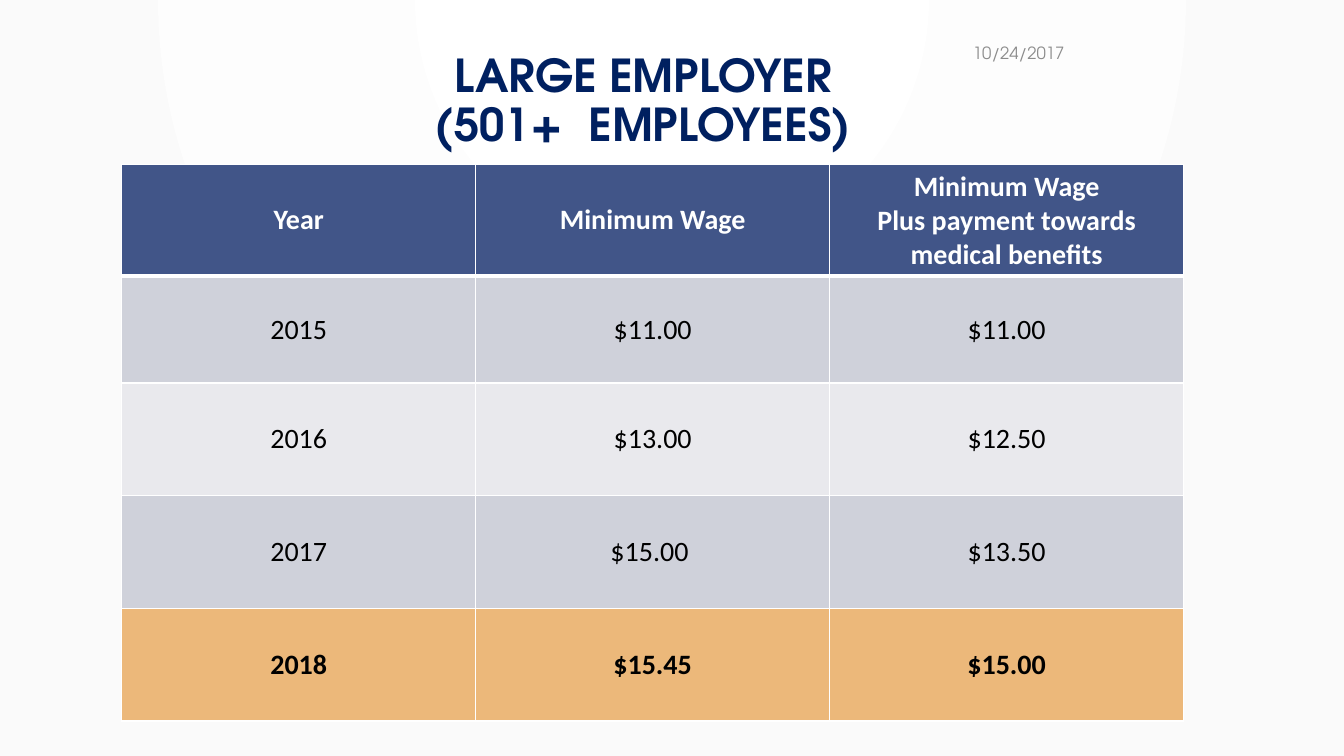
from lxml import etree
from pptx import Presentation
from pptx.dml.color import RGBColor
from pptx.enum.text import MSO_ANCHOR, PP_ALIGN
from pptx.oxml.ns import qn
from pptx.util import Cm, Pt

CENTER, RIGHT = PP_ALIGN.CENTER, PP_ALIGN.RIGHT
TOP, MIDDLE = MSO_ANCHOR.TOP, MSO_ANCHOR.MIDDLE

TITLE = "LARGE EMPLOYER\v(501+  EMPLOYEES)"
DATE = "10/24/2017"
WAGES = [
    ("Year", "Minimum Wage", "Minimum Wage\nPlus payment towards medical benefits"),
    ("2015", "$11.00", "$11.00"),
    ("2016", "$13.00", "$12.50"),
    ("2017", "$15.00 ", "$13.50"),
    ("2018", "$15.45", "$15.00"),
]
# Height in cm, fill, text colour, bold
ROW_STYLES = [
    (2.82, "415588", "FFFFFF", True),
    (2.69, "CFD1DA", "000000", False),
    (2.84, "E9E9ED", "000000", False),
    (2.84, "CFD1DA", "000000", False),
    (2.84, "ECB87A", "000000", True),
]
COLUMN_WIDTH = 8.92
HEADING_FONT, TABLE_FONT = "TeX Gyre Adventor", "Calibri"


def color(value):
    return RGBColor.from_string(value)


def write(frame, text, align, size, font, ink, bold=False):
    frame.text = text
    for para in frame.paragraphs:
        para.alignment = align
        para.font.size = Pt(size)
        para.font.name = font
        para.font.bold = bold
        para.font.color.rgb = color(ink)


def add_text(page, place, anchor, text, *style):
    box = page.shapes.add_textbox(*map(Cm, place))
    box.text_frame.word_wrap = True
    box.text_frame.vertical_anchor = anchor
    write(box.text_frame, text, *style)
    return box


def set_borders(cell, bottom, top):
    """Give a cell white borders; they come before the fill in the XML."""
    properties = cell._tc.get_or_add_tcPr()
    widths = {"a:lnL": 1, "a:lnR": 1, "a:lnT": top, "a:lnB": bottom}
    for position, (tag, width) in enumerate(widths.items()):
        line = etree.Element(qn(tag), w=str(Pt(width)))
        fill = etree.SubElement(line, qn("a:solidFill"))
        etree.SubElement(fill, qn("a:srgbClr"), val="FFFFFF")
        properties.insert(position, line)


def paint_background(page):
    """Fill the page with a radial gradient centred on its top edge."""
    fill = page.background.fill
    fill.gradient()
    for stop, (position, value) in zip(fill.gradient_stops, [(0, "FFFFFF"), (1, "FAFAFA")]):
        stop.position = position
        stop.color.rgb = color(value)
    linear = page.background._cSld.find(".//" + qn("a:lin"))
    radial = etree.Element(qn("a:path"), path="circle")
    etree.SubElement(radial, qn("a:fillToRect"), l="43000", t="0", r="43000", b="100000")
    linear.getparent().replace(linear, radial)


def add_wage_table(page):
    heights = [style[0] for style in ROW_STYLES]
    columns = len(WAGES[0])
    table = page.shapes.add_table(
        len(WAGES), columns, Cm(3.07), Cm(4.14),
        Cm(COLUMN_WIDTH * columns), Cm(sum(heights))).table
    for column in table.columns:
        column.width = Cm(COLUMN_WIDTH)
    for index, (values, style) in enumerate(zip(WAGES, ROW_STYLES)):
        height, fill, ink, bold = style
        table.rows[index].height = Cm(height)
        for cell, value in zip(table.rows[index].cells, values):
            cell.vertical_anchor = MIDDLE
            cell.fill.solid()
            cell.fill.fore_color.rgb = color(fill)
            set_borders(cell, bottom=3 if index == 0 else 1, top=3 if index == 1 else 1)
            write(cell.text_frame, value, CENTER, 20, TABLE_FONT, ink, bold)


def main():
    deck = Presentation()
    deck.slide_width, deck.slide_height = Cm(33.87), Cm(19.05)
    page = deck.slides.add_slide(deck.slide_layouts[6])
    paint_background(page)
    title = add_text(page, (2.87, 1.22, 26.67, 2.31), TOP, TITLE,
                     CENTER, 32.4, HEADING_FONT, "002060", True)
    title.text_frame.paragraphs[0].line_spacing = 0.9
    add_wage_table(page)
    add_text(page, (20.09, 0.91, 6.99, 0.86), MIDDLE, DATE,
             RIGHT, 12, HEADING_FONT, "8C8C8C")
    deck.save("out.pptx")


if __name__ == "__main__":
    main()
